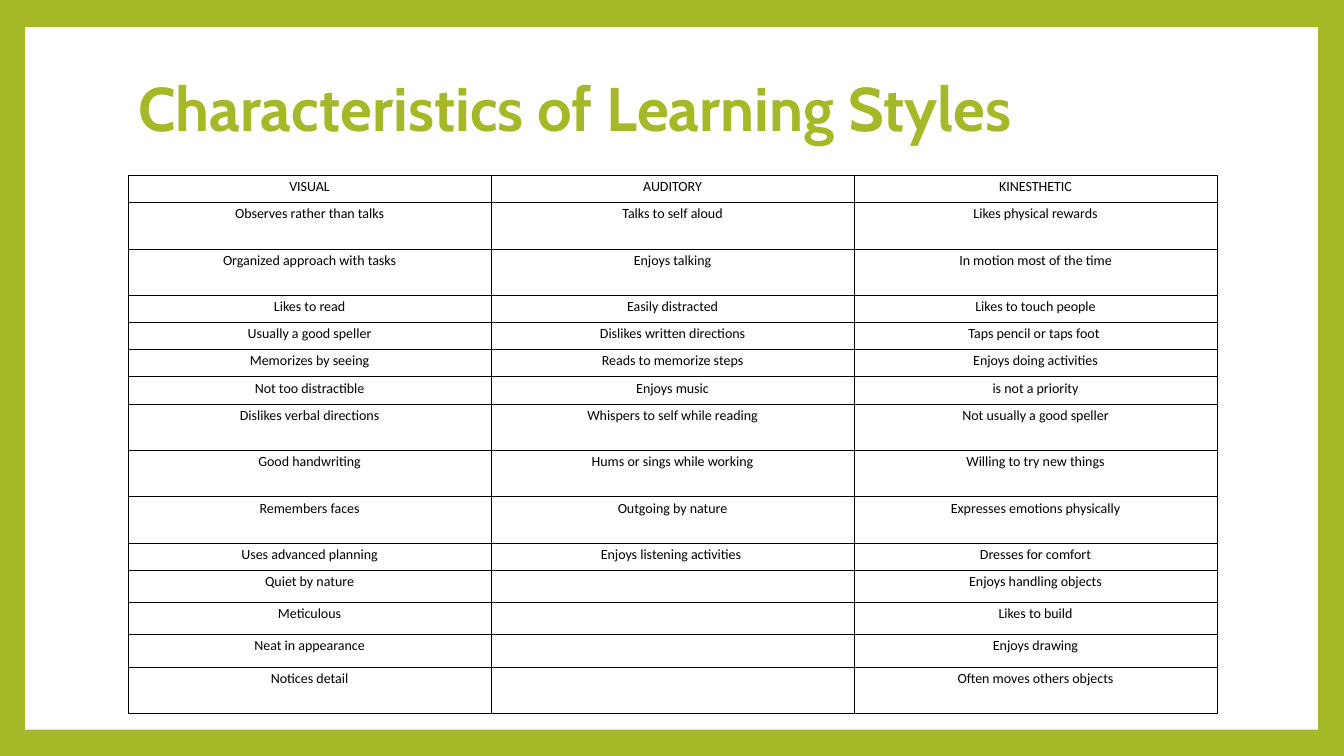
"""Build a slide with a table comparing three learning styles."""
import pptx
import pptx.dml.color
import pptx.enum.shapes
import pptx.enum.text
import pptx.oxml
import pptx.oxml.ns
import pptx.util

Inches = pptx.util.Inches
Pt = pptx.util.Pt
RGB = pptx.dml.color.RGBColor.from_string
PP_ALIGN = pptx.enum.text.PP_ALIGN
ANCHOR = pptx.enum.text.MSO_ANCHOR

COLORS = {"green": "A6B727", "white": "FFFFFF", "black": "000000"}
TITLE_FONT = {"name": "Cabin", "size": Pt(44), "bold": True}
CELL_FONT = {"name": "Calibri", "size": Pt(10), "bold": False}
CELL_FORMAT = {
    "margin_left": Inches(0.03),
    "margin_right": Inches(0.03),
    "margin_top": Inches(0.03),
    "margin_bottom": Inches(0.03),
    "vertical_anchor": ANCHOR.TOP,
}
SHORT, MEDIUM, TALL = 0.27, 0.32, 0.46

STYLES = [
    (SHORT, "VISUAL", "AUDITORY", "KINESTHETIC"),
    (TALL, "Observes rather than talks", "Talks to self aloud", "Likes physical rewards"),
    (TALL, "Organized approach with tasks", "Enjoys talking", "In motion most of the time"),
    (SHORT, "Likes to read", "Easily distracted", "Likes to touch people"),
    (SHORT, "Usually a good speller", "Dislikes written directions", "Taps pencil or taps foot "),
    (SHORT, "Memorizes by seeing", "Reads to memorize steps", "Enjoys doing activities"),
    (SHORT, "Not too distractible", "Enjoys music", "is not a priority"),
    (TALL, "Dislikes verbal directions", "Whispers to self while reading", "Not usually a good speller"),
    (TALL, "Good handwriting", "Hums or sings while working", "Willing to try new things"),
    (TALL, "Remembers faces", "Outgoing by nature", "Expresses emotions physically"),
    (SHORT, "Uses advanced planning", "Enjoys listening activities ", "Dresses for comfort"),
    (MEDIUM, "Quiet by nature", "", "Enjoys handling objects"),
    (MEDIUM, "Meticulous", "", "Likes to build"),
    (MEDIUM, "Neat in appearance", "", "Enjoys drawing"),
    (TALL, "Notices detail", "", "Often moves others objects"),
]


def apply(target, values):
    """Set each named attribute on the target."""
    for name, value in values.items():
        setattr(target, name, value)


def add_run(p, text, font, color):
    """Add a formatted run to a paragraph."""
    r = p.add_run()
    r.text = text
    apply(r.font, font)
    r.font.color.rgb = RGB(COLORS[color])


def add_panel(s):
    """Place the white panel behind the title."""
    box = [Inches(v) for v in (0.25, 0.27, 12.82, 6.97)]
    sp = s.shapes.add_shape(pptx.enum.shapes.MSO_SHAPE.RECTANGLE, *box)
    sp.shadow.inherit = False
    sp.fill.solid()
    sp.fill.fore_color.rgb = RGB(COLORS["white"])
    sp.line.fill.background()
    s.shapes.title.element.addprevious(sp.element)


def set_title(s, text):
    """Move, fill and format the title placeholder."""
    sp = s.shapes.title
    apply(sp, {"left": Inches(1.27), "top": Inches(0.37),
               "width": Inches(10.8), "height": Inches(1.48)})
    tf = sp.text_frame
    apply(tf, {"word_wrap": True, "vertical_anchor": ANCHOR.MIDDLE})
    p = tf.paragraphs[0]
    apply(p, {"alignment": PP_ALIGN.LEFT, "line_spacing": 0.9})
    add_run(p, text, TITLE_FONT, "green")


def set_borders(cell):
    """Draw a thin black line on all four sides of a cell."""
    tc_pr = cell._tc.get_or_add_tcPr()
    for i, side in enumerate(("lnL", "lnR", "lnT", "lnB")):
        ln = pptx.oxml.parse_xml(
            f'<a:{side} {pptx.oxml.ns.nsdecls("a")} w="{Pt(0.67)}"><a:solidFill>'
            f'<a:srgbClr val="{COLORS["black"]}"/></a:solidFill></a:{side}>')
        tc_pr.insert(i, ln)


def fill_cell(cell, text):
    """Write and format one table cell."""
    apply(cell, CELL_FORMAT)
    cell.fill.background()
    set_borders(cell)
    p = cell.text_frame.paragraphs[0]
    p.alignment = PP_ALIGN.CENTER
    if text:
        add_run(p, text, CELL_FONT, "black")
    else:
        p._p.append(pptx.oxml.parse_xml(
            f'<a:endParaRPr {pptx.oxml.ns.nsdecls("a")} sz="1000"/>'))


def add_styles_table(s, rows):
    """Add the table, with row heights taken from the first item of each row."""
    height = sum(row[0] for row in rows)
    frame = s.shapes.add_table(len(rows), 3, Inches(1.27), Inches(1.74),
                               Inches(10.8), Inches(height))
    table = frame.table
    apply(table, {"first_row": False, "horz_banding": False})
    for i, (row_height, *texts) in enumerate(rows):
        table.rows[i].height = Inches(row_height)
        for j, text in enumerate(texts):
            fill_cell(table.cell(i, j), text)


def main():
    """Build and save the slide."""
    prs = pptx.Presentation()
    apply(prs, {"slide_width": Inches(13.33), "slide_height": Inches(7.5)})
    s = prs.slides.add_slide(prs.slide_layouts[5])
    s.background.fill.solid()
    s.background.fill.fore_color.rgb = RGB(COLORS["green"])
    add_panel(s)
    set_title(s, "Characteristics of Learning Styles")
    add_styles_table(s, STYLES)
    prs.save("out.pptx")


if __name__ == "__main__":
    main()
